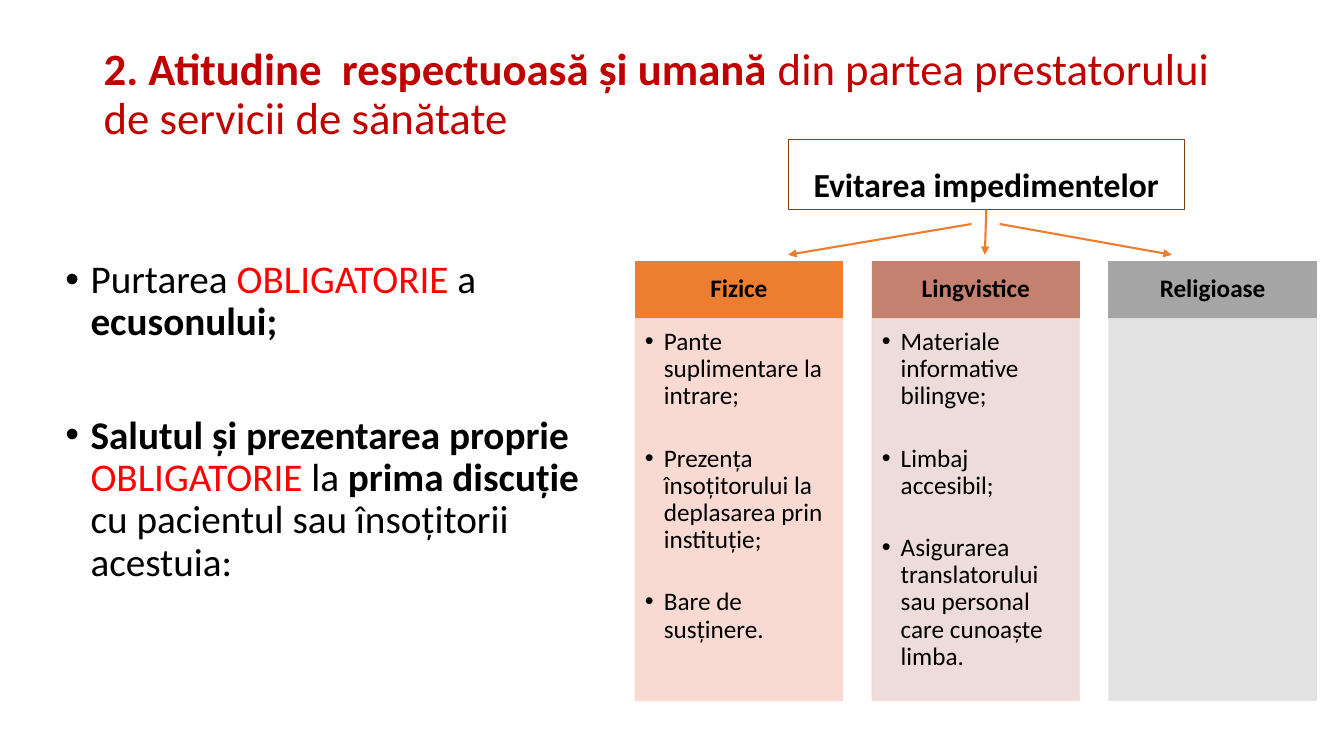
from lxml.etree import SubElement
from pptx import Presentation
from pptx.dml.color import RGBColor
from pptx.enum.shapes import MSO_CONNECTOR, MSO_SHAPE
from pptx.enum.text import MSO_ANCHOR, PP_ALIGN
from pptx.oxml.ns import qn
from pptx.util import Pt

FONT = "Calibri"
BLACK, RED, DARK_RED, ORANGE = "000000", "FF0000", "C00000", "ED7D31"

# Column geometry
LEFT, STEP, WIDTH = 453.6, 169.2, 148.4
HEAD_TOP, HEAD_H, CARD_H = 186.5, 41, 273

COLUMNS = [
    ("Fizice", ORANGE, "F8D7CE", [
        "Pante suplimentare la intrare;",
        "Prezența însoțitorului la deplasarea prin instituție;",
        "Bare de susținere."]),
    ("Lingvistice", "C48170", "EDD9D7", [
        "Materiale informative bilingve;",
        "Limbaj accesibil;",
        "Asigurarea translatorului sau personal care cunoaște limba."]),
    ("Religioase", "A5A5A5", "E1E1E1", []),
]


def rgb(color):
    return RGBColor.from_string(color)


def add_run(p, text, size=18, color=BLACK, bold=False):
    r = p.add_run()
    r.text = text
    r.font.name, r.font.size, r.font.bold = FONT, Pt(size), bold
    r.font.color.rgb = rgb(color)


def set_bullet(p, indent):
    pPr = p._p.get_or_add_pPr()
    pPr.set("marL", str(Pt(indent)))
    pPr.set("indent", str(-Pt(indent)))
    SubElement(pPr, qn("a:buFont"), typeface="Arial")
    SubElement(pPr, qn("a:buChar"), char="•")


def write(sp, paragraphs, align=PP_ALIGN.LEFT, anchor=MSO_ANCHOR.TOP,
          margins=(7.2, 3.6, 7.2, 3.6), bullet=0, gap=0):
    """Each paragraph is a list of (text, run format) pairs."""
    tf = sp.text_frame
    tf.word_wrap, tf.vertical_anchor = True, anchor
    (tf.margin_left, tf.margin_top,
     tf.margin_right, tf.margin_bottom) = map(Pt, margins)
    for i, runs in enumerate(paragraphs):
        p = tf.add_paragraph() if i else tf.paragraphs[0]
        p.alignment, p.line_spacing = align, 0.9
        p.space_before = Pt(gap if i else 0)
        if bullet:
            set_bullet(p, bullet)
        for text, fmt in runs:
            add_run(p, text, **fmt)


def add_text(s, box, paragraphs, **layout):
    write(s.shapes.add_textbox(*map(Pt, box)), paragraphs, **layout)


def add_box(s, box, fill, line, weight=0.5, alpha=100):
    sp = s.shapes.add_shape(MSO_SHAPE.RECTANGLE, *map(Pt, box))
    sp.shadow.inherit = False
    sp.line.color.rgb, sp.line.width = rgb(line), Pt(weight)
    if fill:
        sp.fill.solid()
        sp.fill.fore_color.rgb = rgb(fill)
    else:
        sp.fill.background()
    if alpha < 100:
        for clr in sp._element.spPr.iter(qn("a:srgbClr")):
            SubElement(clr, qn("a:alpha"), val=str(alpha * 1000))
    return sp


def add_arrow(s, x1, y1, x2, y2):
    cn = s.shapes.add_connector(MSO_CONNECTOR.STRAIGHT,
                                *map(Pt, (x1, y1, x2, y2)))
    cn.line.color.rgb, cn.line.width = rgb(ORANGE), Pt(1.5)
    SubElement(cn.line._get_or_add_ln(), qn("a:tailEnd"), type="triangle")
    SubElement(cn._element.spPr, qn("a:effectLst"))
    return cn


def add_column(s, x, title, head_color, card_color, items):
    head = add_box(s, (x, HEAD_TOP, WIDTH, HEAD_H), head_color, head_color)
    write(head, [[(title, dict(bold=True))]], align=PP_ALIGN.CENTER,
          anchor=MSO_ANCHOR.MIDDLE, margins=(10, 6, 10, 6))
    card = add_box(s, (x, HEAD_TOP + HEAD_H, WIDTH, CARD_H),
                   card_color, card_color, alpha=90)
    write(card, [[(item, {})] for item in items],
          margins=(7.2, 7.2, 10, 11.5), bullet=13.5, gap=25)


def main():
    prs = Presentation()
    prs.slide_width, prs.slide_height = Pt(960), Pt(540)
    s = prs.slides.add_slide(prs.slide_layouts[6])

    # Title
    add_text(s, (67, 16, 828, 104.4), [[
        ("2. Atitudine  respectuoasă și umană ",
         dict(size=32, color=DARK_RED, bold=True)),
        ("din partea prestatorului de servicii de sănătate",
         dict(size=32, color=DARK_RED)),
    ]], anchor=MSO_ANCHOR.MIDDLE)

    # Duties on the left
    plain = dict(size=28)
    strong = dict(size=28, bold=True)
    alert = dict(size=28, color=RED)
    add_text(s, (39.6, 182, 406, 321), [
        [("Purtarea ", plain), ("OBLIGATORIE ", alert), ("a ", plain),
         ("ecusonului;", strong)],
        [("Salutul și prezentarea proprie ", strong),
         ("OBLIGATORIE ", alert), ("la ", plain),
         ("prima discuție ", strong),
         ("cu pacientul sau însoțitorii acestuia:", plain)],
    ], bullet=18, gap=50.5)

    # Heading of the scheme
    heading = add_box(s, (563, 100, 283, 50), None, "843C0B", weight=0.75)
    write(heading, [[("Evitarea impedimentelor", dict(size=24, bold=True))]],
          align=PP_ALIGN.CENTER, anchor=MSO_ANCHOR.BOTTOM)

    # Columns
    for i, column in enumerate(COLUMNS):
        add_column(s, LEFT + i * STEP, *column)

    # Arrows
    add_arrow(s, 694, 160, 563, 182)
    add_arrow(s, 714, 160, 837, 182)
    add_arrow(s, 704.5, 150, 703.5, 182).begin_connect(heading, 2)

    prs.save("out.pptx")


if __name__ == "__main__":
    main()
